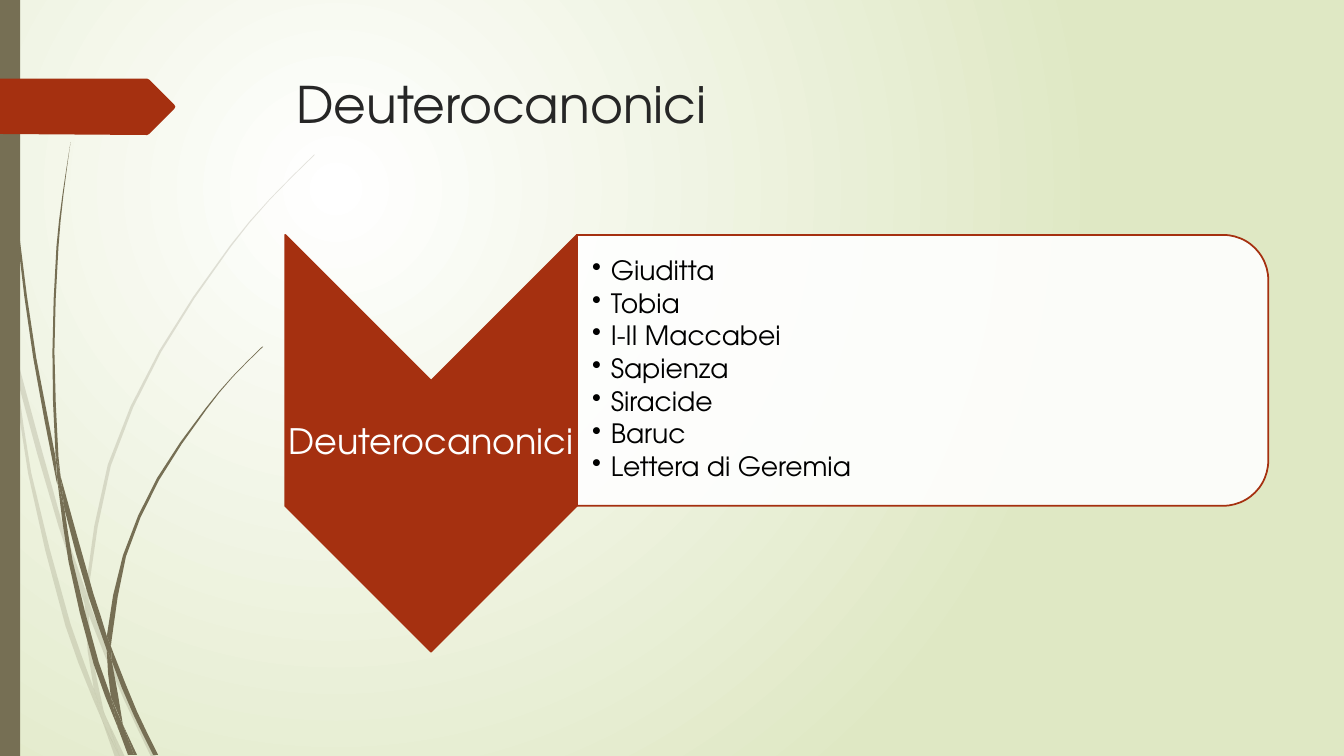
from math import hypot

from lxml import etree
from pptx import Presentation
from pptx.dml.color import RGBColor
from pptx.enum.shapes import MSO_SHAPE as Shape
from pptx.enum.text import MSO_ANCHOR as Anchor, PP_ALIGN as Align
from pptx.oxml.ns import qn
from pptx.util import Pt

TITLE = "Deuterocanonici"
LABEL = "Deuterocanonici"
BOOKS = ["Giuditta", "Tobia", "I-II Maccabei", "Sapienza", "Siracide", "Baruc",
         "Lettera di Geremia"]
FONT = "TeX Gyre Adventor"
COLORS = {"white": "FFFFFF", "sage": "DFE8C4", "olive": "766F54",
          "rust": "A53010", "ink": "262626", "black": "000000"}

# Outlines are knots on a grid of 0.72 pt
GRID = 0.72
PALE_GRASS = [
    [(11, 350), (9, 322), (0, 282), (0, 299), (10, 344)],
    [(58, 522), (84, 599), (85, 586), (62, 520), (14, 345), (17, 376)],
    [(92, 607), (88, 596), (88, 610), (123, 694), (150, 751), (155, 751),
     (127, 692)],
    [(119, 751), (124, 751), (105, 711)],
    [(93, 683), (70, 619), (31, 469), (17, 376), (11, 350), (28, 470),
     (65, 621), (92, 693), (101, 714), (99, 707)],
    [(84, 599), (87, 646), (93, 683), (96, 692), (105, 711), (103, 706),
     (91, 646), (88, 610)],
    [(88, 584), (110, 462), (160, 349), (229, 245), (268, 198), (312, 154),
     (312, 153), (268, 197), (228, 244), (158, 348), (107, 461), (85, 584),
     (88, 596)],
    [(101, 714), (114, 751), (119, 751)],
    [(88, 610), (88, 596), (85, 586), (84, 599)],
    [(96, 692), (93, 683), (99, 707), (101, 714), (119, 751), (105, 711)],
]
DARK_GRASS = [
    [(7, 110), (17, 233), (33, 355), (56, 477), (57, 481), (55, 453),
     (36, 355), (19, 232), (8, 109), (4, 0), (3, 0), (4, 48)],
    [(88, 592), (106, 645), (106, 631), (93, 590), (60, 472), (64, 505)],
    [(113, 649), (110, 641), (111, 656), (132, 708), (152, 749), (157, 749),
     (136, 706)],
    [(110, 691), (98, 657), (72, 556), (64, 505), (57, 477), (68, 557),
     (93, 659), (117, 722), (116, 717)],
    [(60, 472), (58, 453), (54, 349), (58, 245), (63, 193), (70, 141),
     (62, 193), (56, 245), (52, 349), (55, 449)],
    [(133, 749), (136, 749), (122, 719)],
    [(57, 477), (64, 505), (60, 472), (55, 449)],
    [(111, 633), (125, 552), (158, 476), (205, 406), (231, 374), (261, 344),
     (260, 344), (231, 373), (204, 405), (156, 474), (122, 551), (106, 631),
     (110, 641)],
    [(117, 722), (127, 749), (131, 749)],
    [(106, 645), (110, 691), (122, 719), (111, 656)],
    [(106, 645), (111, 656), (110, 641), (106, 631)],
    [(116, 706), (110, 691), (117, 722), (130, 749), (133, 749), (122, 719)],
]
TAG = [(0, 78), (146, 78), (148, 79), (173, 104), (174, 106), (173, 108),
       (148, 133), (146, 134), (0, 133)]

SLIDE_W, SLIDE_H = 960, 540
ARROW_X, ARROW_Y, ARROW_W, ARROW_H = 203.7, 167.8, 208.4, 297.7
PANEL_W, PANEL_H = 493.8, 193.5


def rgb(name):
    return RGBColor.from_string(COLORS[name])


def set_alpha(sp, percent):
    color = sp.fill._xPr.find(qn("a:solidFill"))[0]
    etree.SubElement(color, qn("a:alpha"), val=str(percent * 1000))


def style(sp, fill, line=None, alpha=None):
    sp.shadow.inherit = False
    sp.fill.solid()
    sp.fill.fore_color.rgb = rgb(fill)
    if alpha:
        set_alpha(sp, alpha)
    if line:
        sp.line.color.rgb = rgb(line)
        sp.line.width = Pt(1.25)
    else:
        sp.line.fill.background()


def unit(a, b):
    dx, dy = b[0] - a[0], b[1] - a[1]
    size = hypot(dx, dy)
    return (dx / size, dy / size) if size else (0, 0)


def smooth(knots):
    """Add a rounded midpoint to each long side, keeping sharp corners."""
    count = len(knots)
    points = []

    def tangent(i, chord):
        before, here, after = knots[i - 1], knots[i], knots[(i + 1) % count]
        u, v = unit(before, here), unit(here, after)
        is_corner = u[0] * v[0] + u[1] * v[1] < 0.8
        return chord if is_corner else unit(before, after)

    for i, a in enumerate(knots):
        j = (i + 1) % count
        b = knots[j]
        points.append(a)
        size = hypot(b[0] - a[0], b[1] - a[1])
        if size > 40:
            chord = unit(a, b)
            start, end = tangent(i, chord), tangent(j, chord)
            points.append(tuple((a[k] + b[k]) / 2 + size * (start[k] - end[k]) / 8
                                for k in (0, 1)))
    return points


def add_outline(shapes, points, fill, alpha=None):
    first, *rest = [(Pt(x * GRID), Pt(y * GRID)) for x, y in points]
    builder = shapes.build_freeform(*first, scale=1.0)
    builder.add_line_segments(rest, close=True)
    style(builder.convert_to_shape(), fill, alpha=alpha)


def add_turned(shapes, kind, x, y, w, h, **look):
    """Add a preset shape, turned 90 degrees, that covers the given box."""
    sp = shapes.add_shape(kind, Pt(x + (w - h) / 2), Pt(y + (h - w) / 2),
                          Pt(h), Pt(w))
    sp.rotation = 90
    style(sp, **look)


def add_text(shapes, lines, box, size, color, anchor=Anchor.MIDDLE,
             align=Align.LEFT, insets=(7.2, 3.6, 7.2, 3.6), spacing=1.0,
             after=0, bullet=None, indent=13.5):
    tf = shapes.add_textbox(*map(Pt, box)).text_frame
    tf.word_wrap = True
    tf.vertical_anchor = anchor
    tf.margin_left, tf.margin_top, tf.margin_right, tf.margin_bottom = map(Pt, insets)
    for i, line in enumerate(lines):
        p = tf.paragraphs[0] if i == 0 else tf.add_paragraph()
        p.alignment, p.line_spacing, p.space_after = align, spacing, Pt(after)
        r = p.add_run()
        r.text = line
        r.font.name, r.font.size, r.font.color.rgb = FONT, Pt(size), rgb(color)
        if bullet:
            pr = p._p.get_or_add_pPr()
            pr.set("marL", str(Pt(indent)))
            pr.set("indent", str(-Pt(indent)))
            etree.SubElement(pr, qn("a:buChar"), char=bullet)


def set_background(slide):
    fill = slide.background.fill
    fill.gradient()
    for stop, position, color in zip(fill.gradient_stops, (0, 1), ("white", "sage")):
        stop.position, stop.color.rgb = position, rgb(color)
    grad = slide._element.find(".//" + qn("a:gradFill"))
    for lin in grad.findall(qn("a:lin")):
        grad.remove(lin)
    circle = etree.SubElement(grad, qn("a:path"), {"path": "circle"})
    etree.SubElement(circle, qn("a:fillToRect"), l="50000", t="50000",
                     r="100000", b="100000")


def main():
    prs = Presentation()
    prs.slide_width, prs.slide_height = Pt(SLIDE_W), Pt(SLIDE_H)
    slide = prs.slides.add_slide(prs.slide_layouts[6])
    shapes = slide.shapes
    set_background(slide)

    for grass, alpha in ((PALE_GRASS, 20), (DARK_GRASS, None)):
        group = shapes.add_group_shape()
        for blade in grass:
            add_outline(group.shapes, smooth(blade), "olive", alpha)
    style(shapes.add_shape(Shape.RECTANGLE, 0, 0, Pt(14.4), Pt(SLIDE_H)), "olive")
    add_outline(shapes, TAG, "rust")

    add_text(shapes, [TITLE], (204.5, 49, 702, 100.8), 36, "ink", anchor=Anchor.TOP)
    add_turned(shapes, Shape.CHEVRON, ARROW_X, ARROW_Y, ARROW_W, ARROW_H,
               fill="rust", line="rust")
    add_text(shapes, [LABEL], (ARROW_X, 272.2, ARROW_W, 89.3), 25, "white",
             align=Align.CENTER, insets=(1.4,) * 4, spacing=0.9, after=8.75)
    panel_x = ARROW_X + ARROW_W
    add_turned(shapes, Shape.ROUND_2_SAME_RECTANGLE, panel_x, ARROW_Y, PANEL_W,
               PANEL_H, fill="white", line="rust", alpha=90)
    add_text(shapes, BOOKS, (panel_x, 177.1, 484.6, 174.2), 19, "black",
             insets=(10.8, 0.7, 0.7, 0.7), spacing=0.9, after=2.85, bullet="•")
    prs.save("out.pptx")


if __name__ == "__main__":
    main()
